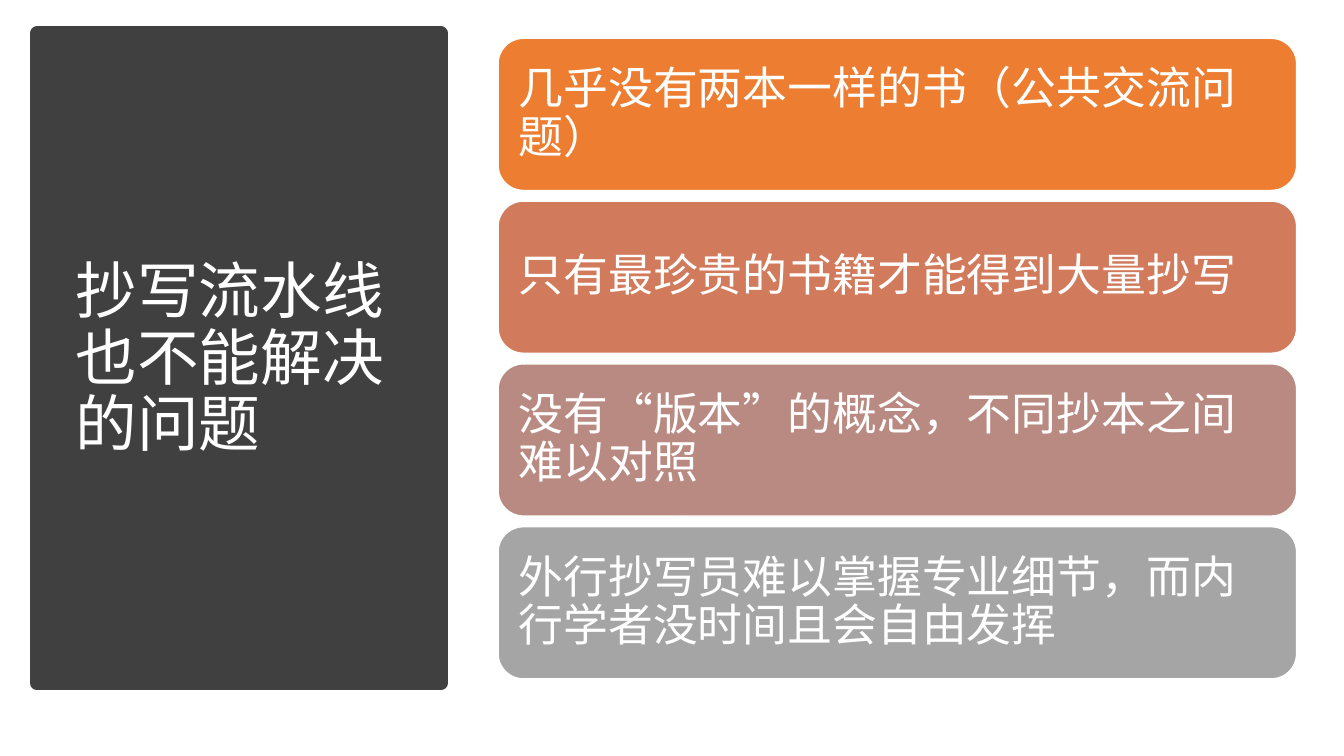
from dataclasses import dataclass

from lxml import etree
from pptx import Presentation
from pptx.dml.color import RGBColor
from pptx.enum.shapes import MSO_SHAPE
from pptx.enum.text import MSO_ANCHOR, MSO_AUTO_SIZE, PP_ALIGN
from pptx.oxml.ns import qn
from pptx.util import Inches, Pt

RECT = MSO_SHAPE.RECTANGLE
ROUND = MSO_SHAPE.ROUNDED_RECTANGLE
MIDDLE = MSO_ANCHOR.MIDDLE
NO_FIT = MSO_AUTO_SIZE.NONE
LEFT = PP_ALIGN.LEFT


@dataclass(frozen=True)
class Theme:
    font: str = "Noto Sans CJK SC"
    white: str = "FFFFFF"
    dark: str = "404040"
    cards: tuple = ("ED7D31", "D17B5C", "B98A82", "A5A5A5")
    title: int = 44
    body: int = 32


THEME = Theme()

TITLE = "抄写流水线也不能解决的问题"
ISSUES = (
    "几乎没有两本一样的书（公共交流问题）",
    "只有最珍贵的书籍才能得到大量抄写",
    "没有“版本”的概念，不同抄本之间难以对照",
    "外行抄写员难以掌握专业细节，而内行学者没时间且会自由发挥",
)


def set_text(shape, text, size, inset):
    frame = shape.text_frame
    frame.text = text
    frame.word_wrap = True
    frame.auto_size = NO_FIT
    frame.vertical_anchor = MIDDLE
    frame.margin_left = frame.margin_right = Inches(inset)
    para = frame.paragraphs[0]
    para.alignment = LEFT
    para.line_spacing = 0.9
    font = para.font
    font.size = Pt(size)
    font.color.rgb = RGBColor.from_string(THEME.white)
    font.name = THEME.font
    east = etree.SubElement(font._element, qn("a:ea"))
    east.set("typeface", THEME.font)


def add_block(slide, kind, box, fill, line, width):
    block = slide.shapes.add_shape(kind, *map(Inches, box))
    block.shadow.inherit = False
    block.fill.solid()
    block.fill.fore_color.rgb = RGBColor.from_string(fill)
    block.line.color.rgb = RGBColor.from_string(line)
    block.line.width = Pt(width)
    return block


def add_title(slide):
    panel = add_block(slide, RECT, (0.37, 0.33, 4, 6.45),
                      THEME.dark, THEME.dark, 10)
    title = slide.shapes.title
    panel._element.addnext(title._element)
    title.left, title.top = Inches(0.65), Inches(0.7)
    title.width, title.height = Inches(3.46), Inches(5.75)
    set_text(title, TITLE, THEME.title, 0.1)


def add_cards(slide):
    top, pitch = 0.38, 1.615
    for row, (text, fill) in enumerate(zip(ISSUES, THEME.cards)):
        box = (4.94, top + row * pitch, 7.92, 1.51)
        card = add_block(slide, ROUND, box, fill, THEME.white, 1)
        set_text(card, text, THEME.body, 0.13)


def main():
    deck = Presentation()
    deck.slide_width, deck.slide_height = Inches(13.33), Inches(7.5)
    slide = deck.slides.add_slide(deck.slide_layouts[5])
    add_title(slide)
    add_cards(slide)
    deck.save("out.pptx")


if __name__ == "__main__":
    main()
